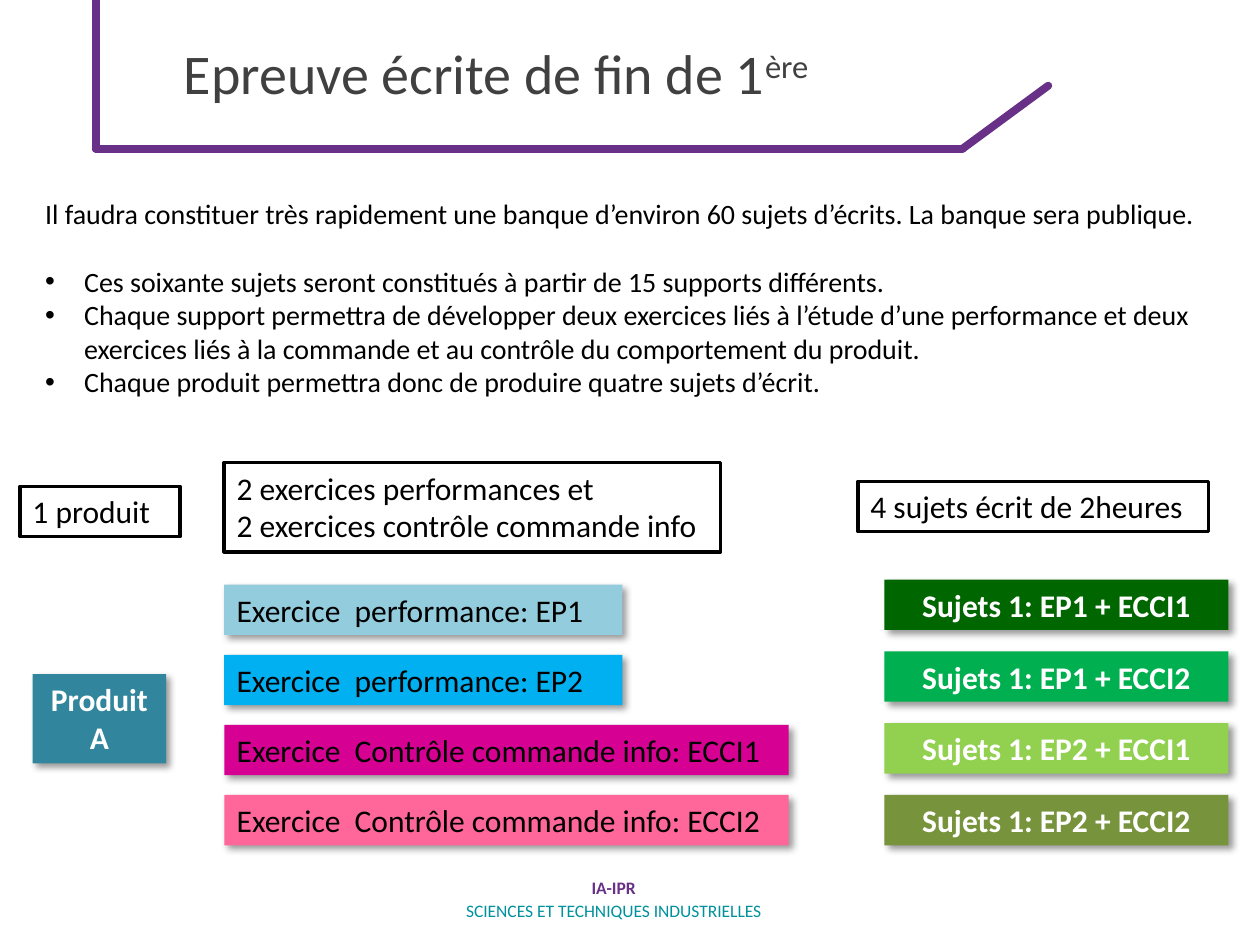
"""Build the slide on the written exam at the end of the première year."""
from lxml import etree
from pptx import Presentation, util as u
from pptx.dml.color import RGBColor
from pptx.enum import shapes, text
from pptx.oxml.ns import qn

PURPLE, TEAL, GREY, BLACK, WHITE = "683086", "00919D", "404040", "000000", "FFFFFF"
LEFT, CENTRE = text.PP_ALIGN.LEFT, text.PP_ALIGN.CENTER
MIDDLE = text.MSO_ANCHOR.MIDDLE

FRAME = [(0.76, 0), (0.76, 1.18), (7.64, 1.18), (8.32, 0.68)]
TITLE = ("Epreuve écrite de fin de 1", "ère")
FOOTER = [("IA-IPR", PURPLE, True), ("SCIENCES ET TECHNIQUES INDUSTRIELLES", TEAL, False)]
INTRO = ("Il faudra constituer très rapidement une banque d’environ 60 sujets d’écrits. "
         "La banque sera publique.")
BULLETS = [
    "Ces soixante sujets seront constitués à partir de 15 supports différents.",
    "Chaque support permettra de développer deux exercices liés à l’étude d’une performance "
    "et deux exercices liés à la commande et au contrôle du comportement du produit.",
    "Chaque produit permettra donc de produire quatre sujets d’écrit.",
]
HEADINGS = [
    (["1 produit"], 0.16, 3.86, 1.27),
    (["2 exercices performances et", "2 exercices contrôle commande info"], 1.78, 3.67, 3.94),
    (["4 sujets écrit de 2heures"], 6.81, 3.82, 2.78),
]
EXERCISES = [
    ("Exercice  performance: EP1", "93CDDD", 3.16),
    ("Exercice  performance: EP2", "00B0F0", 3.16),
    ("Exercice  Contrôle commande info: ECCI1", "D60093", 4.48),
    ("Exercice  Contrôle commande info: ECCI2", "FF6699", 4.48),
]
SUBJECTS = [
    ("Sujets 1: EP1 + ECCI1", "006600"),
    ("Sujets 1: EP1 + ECCI2", "00B050"),
    ("Sujets 1: EP2 + ECCI1", "92D050"),
    ("Sujets 1: EP2 + ECCI2", "77933C"),
]
EXERCISE_LEFT, EXERCISE_TOP = 1.78, 4.64
SUBJECT_LEFT, SUBJECT_TOP, SUBJECT_WIDTH = 7.02, 4.6, 2.73
LAST_TOP, ROW_HEIGHT, TALL_HEIGHT = 6.31, 0.4, 0.71


def colour(value):
    """Turn a hex string into a colour."""
    return RGBColor.from_string(value)


def inches(*values):
    """Turn numbers into lengths."""
    return [u.Inches(value) for value in values]


def write(paragraph, words, size, ink=BLACK, bold=False, **formats):
    """Add one run and set the formats of its paragraph."""
    run = paragraph.add_run()
    run.text = words
    for name, value in dict(name="Calibri", size=u.Pt(size), bold=bold).items():
        setattr(run.font, name, value)
    run.font.color.rgb = colour(ink)
    for name, value in formats.items():
        setattr(paragraph, name, value)
    return run


def paragraphs(frame, count):
    """Return the given number of paragraphs of an empty frame."""
    return [frame.paragraphs[0]] + [frame.add_paragraph() for _ in range(count - 1)]


def add_text(slide, box, anchor=text.MSO_ANCHOR.TOP):
    """Add a wrapping text box and return its frame."""
    frame = slide.shapes.add_textbox(*inches(*box)).text_frame
    frame.word_wrap = True
    frame.vertical_anchor = anchor
    return frame


def add_stroke(slide, start, end):
    """Add one round-ended stroke of the title frame."""
    connector = slide.shapes.add_connector(
        shapes.MSO_CONNECTOR.STRAIGHT, *inches(*start, *end))
    connector.line.color.rgb = colour(PURPLE)
    connector.line.width = u.Pt(4.5)
    properties = connector._element.spPr
    properties.find(qn("a:ln")).set("cap", "rnd")
    etree.SubElement(properties, qn("a:effectLst"))


def add_shadow(shape):
    """Give a shape a soft shadow towards the lower right."""
    effects = shape._element.spPr.find(qn("a:effectLst"))
    shadow = etree.SubElement(effects, qn("a:outerShdw"), blurRad=str(u.Pt(4)),
                              dist=str(u.Pt(3)), dir="2700000", algn="tl", rotWithShape="0")
    ink = etree.SubElement(shadow, qn("a:srgbClr"), val=BLACK)
    etree.SubElement(ink, qn("a:alpha"), val="40000")


def add_box(slide, lines, box, fill, ink=BLACK, bold=False, align=LEFT, outlined=False):
    """Add a labelled rectangle, either outlined or shadowed."""
    shape = slide.shapes.add_shape(shapes.MSO_SHAPE.RECTANGLE, *inches(*box))
    shape.shadow.inherit = False
    shape.fill.solid()
    shape.fill.fore_color.rgb = colour(fill)
    if outlined:
        shape.line.color.rgb = colour(BLACK)
        shape.line.width = u.Pt(2)
    else:
        shape.line.fill.background()
        add_shadow(shape)
    frame = shape.text_frame
    frame.word_wrap = True
    frame.vertical_anchor = text.MSO_ANCHOR.TOP
    for paragraph, words in zip(paragraphs(frame, len(lines)), lines):
        write(paragraph, words, 18, ink, bold, alignment=align)


def add_bullet(paragraph):
    """Give a paragraph a hanging bullet."""
    properties = paragraph._p.get_or_add_pPr()
    indent = u.Inches(0.31)
    properties.set("marL", str(indent))
    properties.set("indent", str(-indent))
    etree.SubElement(properties, qn("a:buFont"), typeface="Arial")
    etree.SubElement(properties, qn("a:buChar"), char="•")


def row_tops(first, count):
    """Spread rows evenly from the first top to the shared last top."""
    return [first + (LAST_TOP - first) * row / (count - 1) for row in range(count)]


def main():
    """Build and save the presentation."""
    presentation = Presentation()
    presentation.slide_width, presentation.slide_height = inches(10, 7.5)
    slide = presentation.slides.add_slide(presentation.slide_layouts[6])

    for start, end in zip(FRAME, FRAME[1:]):
        add_stroke(slide, start, end)

    footer = add_text(slide, (3.56, 6.76, 2.62, 0.74), MIDDLE)
    for paragraph, (words, ink, bold) in zip(paragraphs(footer, len(FOOTER)), FOOTER):
        write(paragraph, words, 10, ink, bold, alignment=CENTRE, line_spacing=u.Pt(13.2))

    title = add_text(slide, (1.36, 0, 8.63, 1.15), MIDDLE).paragraphs[0]
    base, ordinal = [write(title, words, 32, GREY) for words in TITLE]
    ordinal.font._element.set("baseline", "30000")

    body = add_text(slide, (0.26, 1.51, 9.32, 1.99))
    intro, *items = paragraphs(body, 1 + len(BULLETS))
    write(intro, INTRO, 16, space_after=u.Pt(19.5))
    for paragraph, words in zip(items, BULLETS):
        add_bullet(paragraph)
        write(paragraph, words, 16)

    add_box(slide, ["Produit A"], (0.26, 5.35, 1.06, TALL_HEIGHT), "31859C", WHITE, True, CENTRE)
    for top, (words, fill, width) in zip(row_tops(EXERCISE_TOP, len(EXERCISES)), EXERCISES):
        add_box(slide, [words], (EXERCISE_LEFT, top, width, ROW_HEIGHT), fill)
    for top, (words, fill) in zip(row_tops(SUBJECT_TOP, len(SUBJECTS)), SUBJECTS):
        add_box(slide, [words], (SUBJECT_LEFT, top, SUBJECT_WIDTH, ROW_HEIGHT),
                fill, WHITE, True, CENTRE)
    for lines, left, top, width in HEADINGS:
        height = TALL_HEIGHT if len(lines) > 1 else ROW_HEIGHT
        add_box(slide, lines, (left, top, width, height), WHITE, outlined=True)

    presentation.save("out.pptx")


if __name__ == "__main__":
    main()
